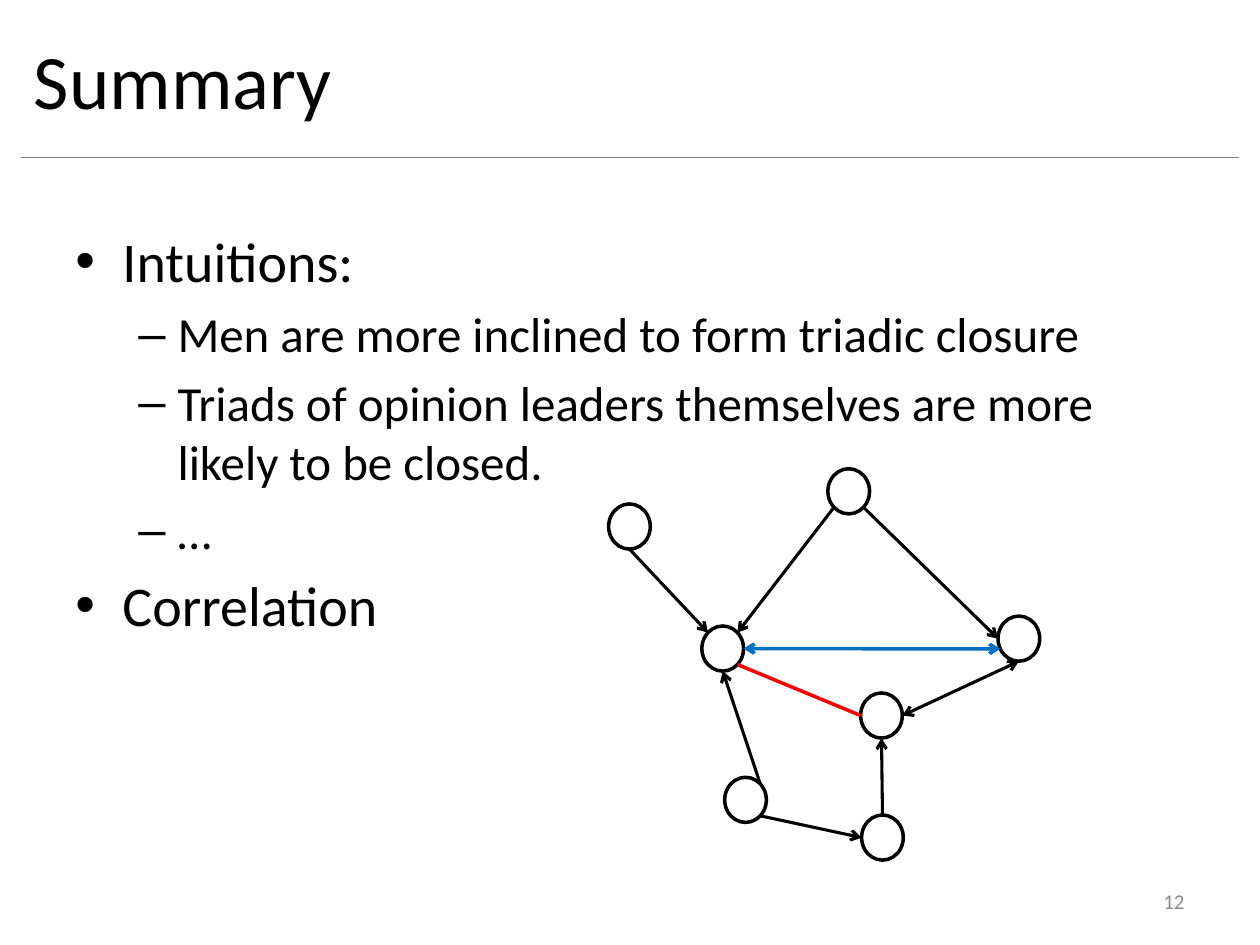
from math import cos, radians, sin

from lxml.etree import SubElement
from pptx import Presentation
from pptx.dml.color import RGBColor
from pptx.enum.shapes import MSO_CONNECTOR, MSO_SHAPE
from pptx.enum.text import MSO_ANCHOR, PP_ALIGN
from pptx.oxml.ns import qn
from pptx.util import Cm, Pt

FONT = "Calibri"
COLORS = {"text": "000000", "number": "8C8C8C", "rule": "7F7F7F",
          "edge": "000000", "mutual": "0070C0", "closing": "FF0000"}

TITLE = "Summary"
PAGE_NUMBER = "12"
POINTS = [
    (0, "Intuitions:"),
    (1, "Men are more inclined to form triadic closure"),
    (1, "Triads of opinion leaders themselves are more likely to be closed."),
    (1, "…"),
    (0, "Correlation"),
]
LEVELS = [
    {"size": 32, "bullet": "•", "margin": 0.95, "indent": -0.95},
    {"size": 28, "bullet": "–", "margin": 2.06, "indent": -0.79},
]

NODE_WIDTH, NODE_HEIGHT = 0.84, 0.91
NODES = {
    "hub": (14.15, 12.62),
    "right": (20.12, 12.42),
    "left": (12.27, 10.16),
    "lower": (14.61, 15.67),
    "middle": (17.35, 13.97),
    "bottom": (17.37, 16.43),
    "top": (16.69, 9.45),
}
EDGES = [
    ("top", 135, "hub", 315, "edge", 1.75, ["tailEnd"]),
    ("top", 45, "right", 180, "edge", 1.75, ["tailEnd"]),
    ("right", 90, "middle", 0, "edge", 1.75, ["headEnd", "tailEnd"]),
    ("left", 90, "hub", 225, "edge", 1.75, ["tailEnd"]),
    ("lower", 45, "bottom", 180, "edge", 1.75, ["tailEnd"]),
    ("bottom", 270, "middle", 90, "edge", 1.75, ["tailEnd"]),
    ("lower", 315, "hub", 90, "edge", 1.75, ["tailEnd"]),
    ("hub", 0, "right", 153, "mutual", 2, ["headEnd", "tailEnd"]),
    ("hub", 45, "middle", 180, "closing", 2, []),
]


def color(name):
    return RGBColor.from_string(COLORS[name])


def set_font(paragraph, size, color_name):
    paragraph.font.name = FONT
    paragraph.font.size = Pt(size)
    paragraph.font.color.rgb = color(color_name)


def add_text_box(slide, left, top, width, height):
    frame = slide.shapes.add_textbox(Cm(left), Cm(top), Cm(width), Cm(height)).text_frame
    frame.word_wrap = True
    return frame


def set_bullet(paragraph, style):
    properties = paragraph._p.get_or_add_pPr()
    properties.set("marL", str(Cm(style["margin"])))
    properties.set("indent", str(Cm(style["indent"])))
    spacing = SubElement(properties, qn("a:spcBef"))
    SubElement(spacing, qn("a:spcPct"), val="20000")
    SubElement(properties, qn("a:buFont"), typeface="Arial")
    SubElement(properties, qn("a:buChar"), char=style["bullet"])


def add_line(slide, start, end, color_name, width, arrows=()):
    points = [Cm(value) for value in (*start, *end)]
    connector = slide.shapes.add_connector(MSO_CONNECTOR.STRAIGHT, *points)
    connector.line.color.rgb = color(color_name)
    connector.line.width = Pt(width)
    for arrow in arrows:
        SubElement(connector.line._get_or_add_ln(), qn(f"a:{arrow}"), type="arrow")
    SubElement(connector._element.spPr, qn("a:effectLst"))


def rim_point(node, angle):
    left, top = NODES[node]
    return (left + NODE_WIDTH / 2 * (1 + cos(radians(angle))),
            top + NODE_HEIGHT / 2 * (1 + sin(radians(angle))))


def add_title(slide):
    title = slide.shapes.title
    title.left, title.top, title.width, title.height = Cm(0.43), Cm(0), Cm(22.86), Cm(3.18)
    title.text_frame.text = TITLE
    title.text_frame.vertical_anchor = MSO_ANCHOR.MIDDLE
    paragraph = title.text_frame.paragraphs[0]
    paragraph.alignment = PP_ALIGN.LEFT
    set_font(paragraph, 44, "text")


def add_points(slide):
    frame = add_text_box(slide, 1.27, 4.45, 22.86, 12.57)
    for index, (level, text) in enumerate(POINTS):
        paragraph = frame.add_paragraph() if index else frame.paragraphs[0]
        paragraph.text = text
        paragraph.level = level
        set_bullet(paragraph, LEVELS[level])
        set_font(paragraph, LEVELS[level]["size"], "text")


def add_page_number(slide):
    frame = add_text_box(slide, 18.21, 17.65, 5.92, 1.02)
    frame.vertical_anchor = MSO_ANCHOR.MIDDLE
    paragraph = frame.paragraphs[0]
    paragraph.text = PAGE_NUMBER
    paragraph.alignment = PP_ALIGN.RIGHT
    set_font(paragraph, 12, "number")


def add_network(slide):
    for left, top in NODES.values():
        node = slide.shapes.add_shape(MSO_SHAPE.OVAL, Cm(left), Cm(top),
                                      Cm(NODE_WIDTH), Cm(NODE_HEIGHT))
        node.shadow.inherit = False
        node.fill.background()
        node.line.color.rgb = color("edge")
        node.line.width = Pt(2)
    for source, source_angle, target, target_angle, color_name, width, arrows in EDGES:
        add_line(slide, rim_point(source, source_angle), rim_point(target, target_angle),
                 color_name, width, arrows)


def main():
    """Build the summary slide with its triadic closure network."""
    presentation = Presentation()
    presentation.slide_width, presentation.slide_height = Cm(25.4), Cm(19.05)
    slide = presentation.slides.add_slide(presentation.slide_layouts[5])
    add_title(slide)
    add_points(slide)
    add_page_number(slide)
    add_line(slide, (0.43, 3.17), (24.97, 3.17), "rule", 0.75)
    add_network(slide)
    presentation.save("out.pptx")


if __name__ == "__main__":
    main()
